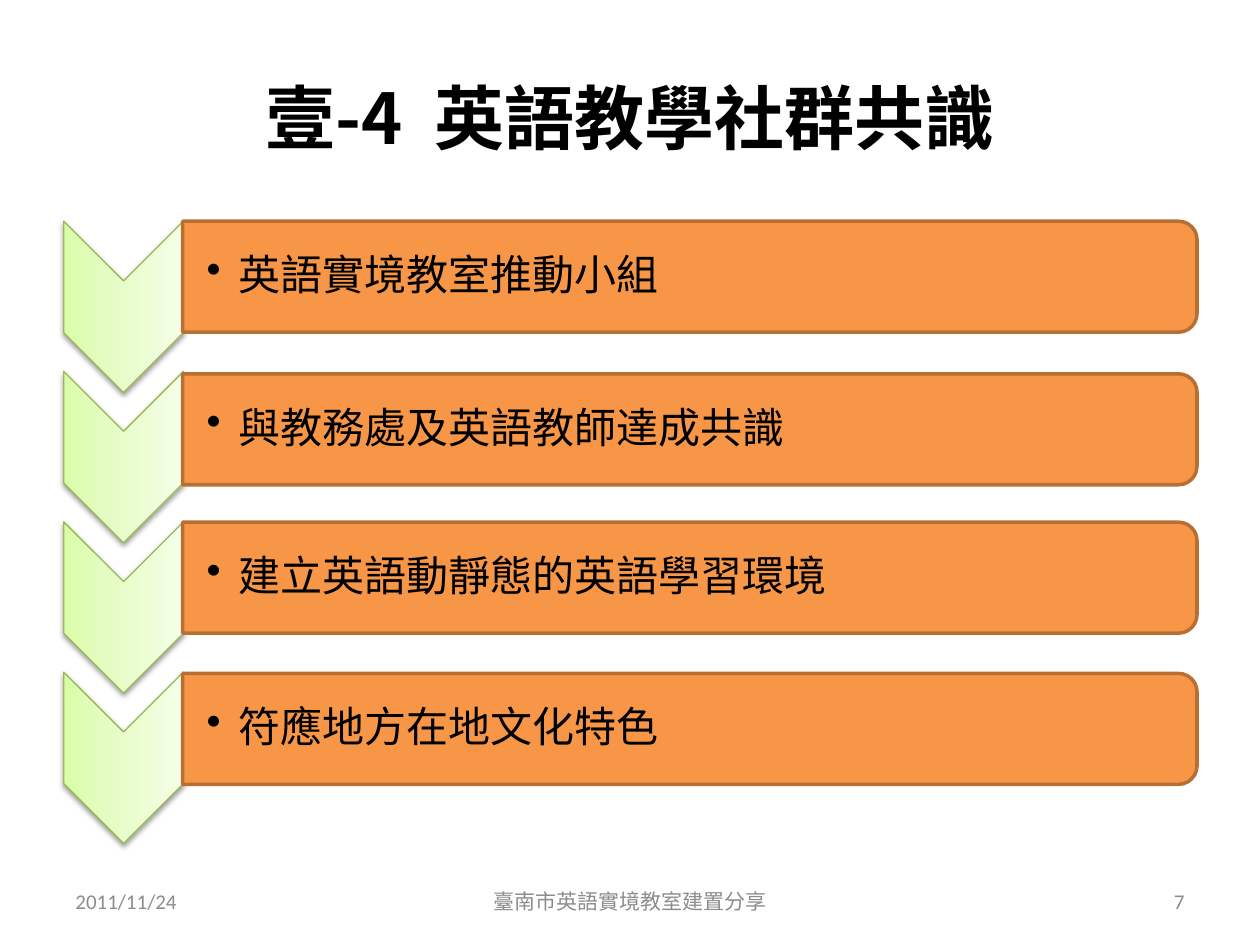
from dataclasses import dataclass

from lxml import etree
from pptx import Presentation
from pptx.dml.color import RGBColor
from pptx.enum.shapes import MSO_SHAPE
from pptx.enum.text import MSO_ANCHOR, PP_ALIGN
from pptx.oxml import parse_xml
from pptx.oxml.ns import nsdecls, qn
from pptx.shapes.autoshape import Shape
from pptx.slide import Slide
from pptx.text.text import _Paragraph as Paragraph
from pptx.util import Pt

CHEVRON = MSO_SHAPE.CHEVRON
ROUNDED_BAR = MSO_SHAPE.ROUND_2_SAME_RECTANGLE
MIDDLE = MSO_ANCHOR.MIDDLE
LEFT, CENTER, RIGHT = PP_ALIGN.LEFT, PP_ALIGN.CENTER, PP_ALIGN.RIGHT

CJK_FONT = "Noto Sans CJK SC"
LATIN_FONT = "Calibri"
BLACK, GREY = "000000", "8C8C8C"
ORANGE, BROWN, GREEN = "F79646", "B76F34", "98B955"
CHEVRON_STOPS = ((0, "DAFDA7"), (35, "E4FCC2"), (100, "F5FFE7"))

CHEVRON_LEFT, CHEVRON_TOP, CHEVRON_PITCH = 36.4, 126.4, 85.9
CHEVRON_WIDTH, CHEVRON_HEIGHT = 68.4, 97.9
BAR_LEFT, BAR_WIDTH, BAR_HEIGHT = 104.4, 579.6, 63.4
TEXT_WIDTH, TEXT_HEIGHT = 576.7, 57.6


@dataclass(frozen=True)
class Step:
    text: str
    bar_top: float


@dataclass(frozen=True)
class Footer:
    text: str
    left: float
    width: float
    align: PP_ALIGN


STEPS = (
    Step("英語實境教室推動小組", 126.4),
    Step("與教務處及英語教師達成共識", 213.6),
    Step("建立英語動靜態的英語學習環境", 298.4),
    Step("符應地方在地文化特色", 384.8),
)
FOOTERS = (
    Footer("2011/11/24", 36, 168, LEFT),
    Footer("臺南市英語實境教室建置分享", 246, 228, CENTER),
    Footer("7", 516, 168, RIGHT),
)


def color(value: str) -> RGBColor:
    return RGBColor.from_string(value)


def format_runs(para: Paragraph, font_name: str, size: float, ink: str,
                bold: bool = False) -> None:
    for span in para.runs:
        span.font.name = font_name
        span.font.size = Pt(size)
        span.font.bold = bold
        span.font.color.rgb = color(ink)
        east_asian = etree.SubElement(span.font._element, qn("a:ea"))
        east_asian.set("typeface", CJK_FONT)


def add_turned_shape(slide: Slide, kind: MSO_SHAPE, left: float, top: float,
                     width: float, height: float) -> Shape:
    """Add a shape turned by 90 degrees that covers the given area."""
    shift = (width - height) / 2
    shape = slide.shapes.add_shape(kind, Pt(left + shift), Pt(top - shift),
                                   Pt(height), Pt(width))
    shape.rotation = 90
    shape.shadow.inherit = False
    return shape


def add_chevron(slide: Slide, top: float) -> None:
    chevron = add_turned_shape(slide, CHEVRON, CHEVRON_LEFT, top,
                               CHEVRON_WIDTH, CHEVRON_HEIGHT)
    chevron.line.color.rgb = color(GREEN)
    chevron.line.width = Pt(0.75)
    stops = "".join(
        f'<a:gs pos="{place * 1000}"><a:srgbClr val="{value}"/></a:gs>'
        for place, value in CHEVRON_STOPS)
    properties = chevron._element.spPr
    properties.find(qn("a:prstGeom")).addnext(parse_xml(
        f'<a:gradFill {nsdecls("a")} rotWithShape="1"><a:gsLst>{stops}</a:gsLst>'
        '<a:lin ang="16200000" scaled="0"/></a:gradFill>'))
    properties.find(qn("a:effectLst")).append(parse_xml(
        f'<a:outerShdw {nsdecls("a")} blurRad="{Pt(3.1)}" dist="{Pt(1.6)}" '
        'dir="5400000" rotWithShape="0"><a:srgbClr val="000000">'
        '<a:alpha val="38000"/></a:srgbClr></a:outerShdw>'))


def add_bar(slide: Slide, step: Step) -> None:
    bar = add_turned_shape(slide, ROUNDED_BAR, BAR_LEFT, step.bar_top,
                           BAR_WIDTH, BAR_HEIGHT)
    bar.fill.solid()
    bar.fill.fore_color.rgb = color(ORANGE)
    bar.line.color.rgb = color(BROWN)
    bar.line.width = Pt(2)


def add_text(slide: Slide, text: str, left: float, top: float, width: float,
             height: float) -> Shape:
    box = slide.shapes.add_textbox(Pt(left), Pt(top), Pt(width), Pt(height))
    frame = box.text_frame
    frame.word_wrap = True
    frame.vertical_anchor = MIDDLE
    frame.text = text
    return box


def add_bullet_text(slide: Slide, step: Step) -> None:
    box = add_text(slide, step.text, BAR_LEFT, step.bar_top + 3,
                   TEXT_WIDTH, TEXT_HEIGHT)
    frame = box.text_frame
    frame.margin_left = Pt(13.7)
    frame.margin_top = frame.margin_right = frame.margin_bottom = Pt(1.4)
    para = frame.paragraphs[0]
    para.line_spacing = 0.9
    properties = para._p.get_or_add_pPr()
    properties.set("marL", str(Pt(18)))
    properties.set("indent", str(Pt(-18)))
    etree.SubElement(properties, qn("a:buChar")).set("char", "•")
    format_runs(para, CJK_FONT, 24, BLACK)


def add_footer(slide: Slide, footer: Footer) -> None:
    box = add_text(slide, footer.text, footer.left, 500.5, footer.width, 28.8)
    para = box.text_frame.paragraphs[0]
    para.alignment = footer.align
    format_runs(para, LATIN_FONT, 12, GREY)


def set_title(slide: Slide, text: str) -> None:
    title = slide.shapes.title
    title.left, title.top = Pt(36), Pt(21.6)
    title.width, title.height = Pt(648), Pt(90)
    title.text_frame.text = text
    title.text_frame.vertical_anchor = MIDDLE
    para = title.text_frame.paragraphs[0]
    para.alignment = CENTER
    format_runs(para, CJK_FONT, 40, BLACK, bold=True)


def main() -> None:
    deck = Presentation()
    deck.slide_width, deck.slide_height = Pt(720), Pt(540)
    page = deck.slides.add_slide(deck.slide_layouts.get_by_name("Title Only"))
    set_title(page, "壹-4  英語教學社群共識")
    for index, step in enumerate(STEPS):
        add_chevron(page, CHEVRON_TOP + index * CHEVRON_PITCH)
        add_bar(page, step)
        add_bullet_text(page, step)
    for footer in FOOTERS:
        add_footer(page, footer)
    deck.save("out.pptx")


if __name__ == "__main__":
    main()
